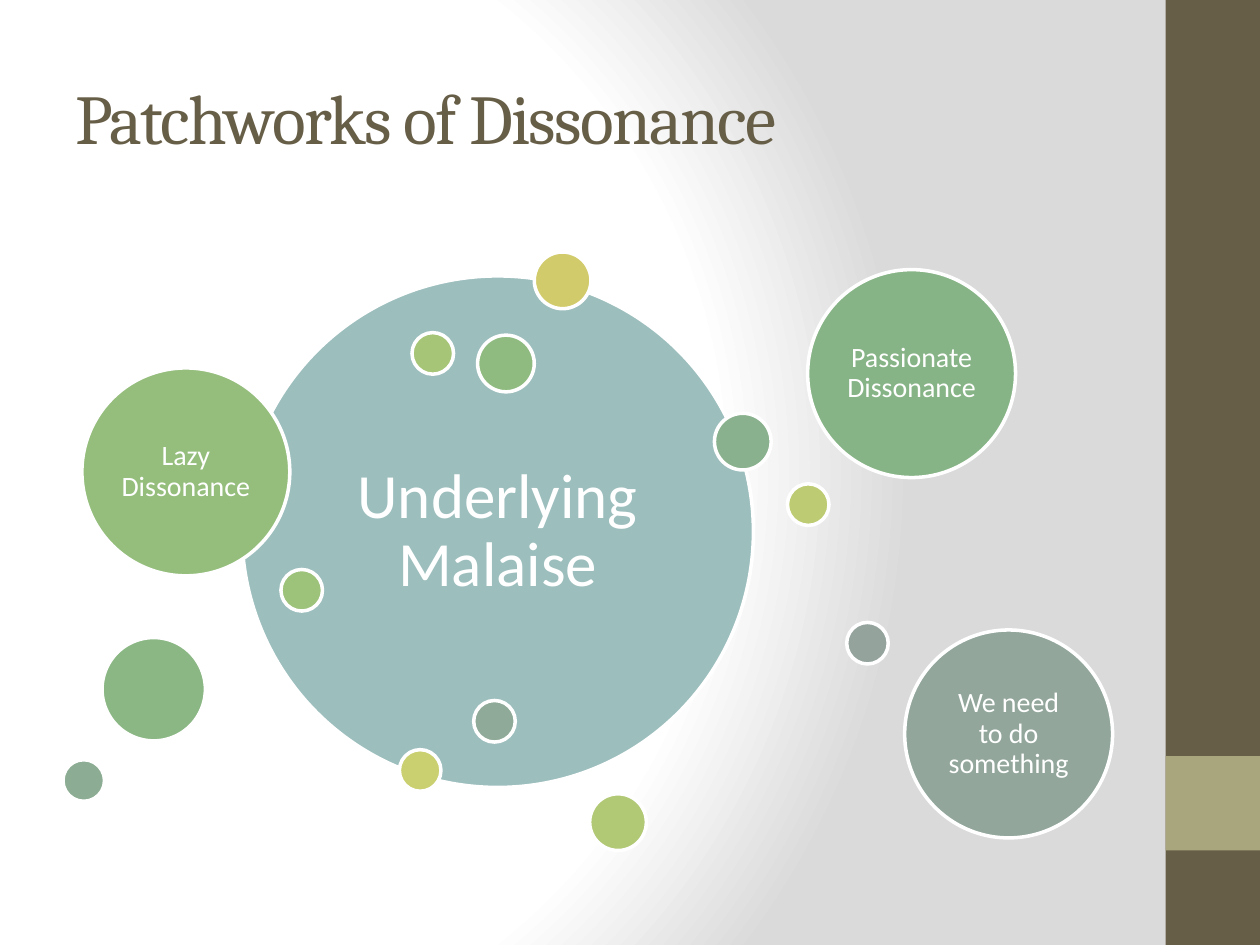
from pptx import Presentation
from pptx.dml.color import RGBColor
from pptx.enum.shapes import MSO_SHAPE
from pptx.enum.text import MSO_ANCHOR, PP_ALIGN
from pptx.oxml import parse_xml
from pptx.oxml.ns import nsdecls
from pptx.util import Inches, Pt

WHITE, BROWN, TAN = "FFFFFF", "675E47", "A9A57C"
SMALL, MEDIUM, LARGE, TOPIC, CORE = 0.33, 0.45, 0.82, 1.65, 4.06

BUBBLES = [
    (1.42, 0.19, CORE, "9CBEBD", "Underlying Malaise", 36, 0.15),
    (3.74, 0, MEDIUM, "D2CB6C"),
    (2.67, 3.95, SMALL, "CACF6F"),
    (5.75, 1.84, SMALL, "BDCB72"),
    (4.18, 4.3, MEDIUM, "B1C875"),
    (2.77, 0.64, SMALL, "A6C577"),
    (1.73, 2.52, SMALL, "9DC27A"),
    (0.15, 0.92, TOPIC, "95BE7D", "Lazy Dissonance", 16, 0.07),
    (3.29, 0.66, MEDIUM, "8FBB80"),
    (0.31, 3.06, LARGE, "8AB783"),
    (5.91, 0.14, TOPIC, "87B486", "Passionate Dissonance", 16, 0.07),
    (5.17, 1.28, MEDIUM, "89B18D"),
    (0, 4.03, SMALL, "8CAD93"),
    (3.26, 3.56, SMALL, "8FAA98"),
    (6.68, 3, TOPIC, "92A69B", "We need to do something", 16, 0.07),
    (6.22, 2.94, SMALL, "95A39D"),
]


def rgb(value):
    return RGBColor.from_string(value)


def set_attrs(obj, values):
    for name, value in values.items():
        setattr(obj, name, value)


def add_filled(shapes, kind, x, y, w, h, color):
    sp = shapes.add_shape(kind, Inches(x), Inches(y), Inches(w), Inches(h))
    sp.shadow.inherit = False
    sp.fill.solid()
    sp.fill.fore_color.rgb = rgb(color)
    return sp


def write_text(tf, text, size, font, color, **para):
    set_attrs(tf, {"word_wrap": True, "vertical_anchor": MSO_ANCHOR.MIDDLE})
    p = tf.paragraphs[0]
    set_attrs(p, para)
    r = p.add_run()
    r.text = text
    set_attrs(r.font, {"size": Pt(size), "name": font})
    r.font.color.rgb = rgb(color)
    return r


def add_background(s):
    s.background.fill.solid()
    bg = s.element.xpath(".//p:bgPr")[0]
    stops = "".join(
        f'<a:gs pos="{pos * 1000}"><a:srgbClr val="{color}"/></a:gs>'
        for pos, color in [(0, WHITE), (75, WHITE), (100, "DADADA")]
    )
    bg.replace(bg[0], parse_xml(
        f'<a:gradFill {nsdecls("a")} rotWithShape="1"><a:gsLst>{stops}</a:gsLst>'
        '<a:path path="circle"><a:fillToRect l="20000" t="50000" '
        'r="100000" b="50000"/></a:path></a:gradFill>'
    ))


def add_sidebar(s, x, y, w, h):
    for top, height, color in [(y, h, BROWN), (y + 0.8 * h, w, TAN)]:
        sp = add_filled(s.shapes, MSO_SHAPE.RECTANGLE, x, top, w, height, color)
        sp.line.fill.background()


def add_title(s, x, y, w, h):
    tb = s.shapes.add_textbox(Inches(x), Inches(y), Inches(w), Inches(h))
    r = write_text(tb.text_frame, "Patchworks of Dissonance", 40, "Cambria", BROWN)
    r.font._element.set("spc", "-100")


def add_bubble(shapes, x, y, d, color, text=None, size=None, inset=0):
    sp = add_filled(shapes, MSO_SHAPE.OVAL, x, y, d, d, color)
    sp.line.color.rgb = rgb(WHITE)
    sp.line.width = Pt(2)
    if text:
        tf = sp.text_frame
        sides = ("left", "top", "right", "bottom")
        set_attrs(tf, {f"margin_{side}": Inches(inset) for side in sides})
        write_text(tf, text, size, "Calibri", WHITE,
                   alignment=PP_ALIGN.CENTER, line_spacing=0.9)


def add_bubbles(s, x, y):
    group = s.shapes.add_group_shape()
    for dx, dy, *bubble in BUBBLES:
        add_bubble(group.shapes, x + dx, y + dy, *bubble)


def main():
    prs = Presentation()
    set_attrs(prs, {"slide_width": Inches(10), "slide_height": Inches(7.5)})
    s = prs.slides.add_slide(prs.slide_layouts[6])
    add_background(s)
    add_sidebar(s, 9.25, 0, 0.75, 7.5)
    add_title(s, 0.5, 0.3, 8.33, 1.25)
    add_bubbles(s, 0.5, 2)
    prs.save("out.pptx")


if __name__ == "__main__":
    main()
